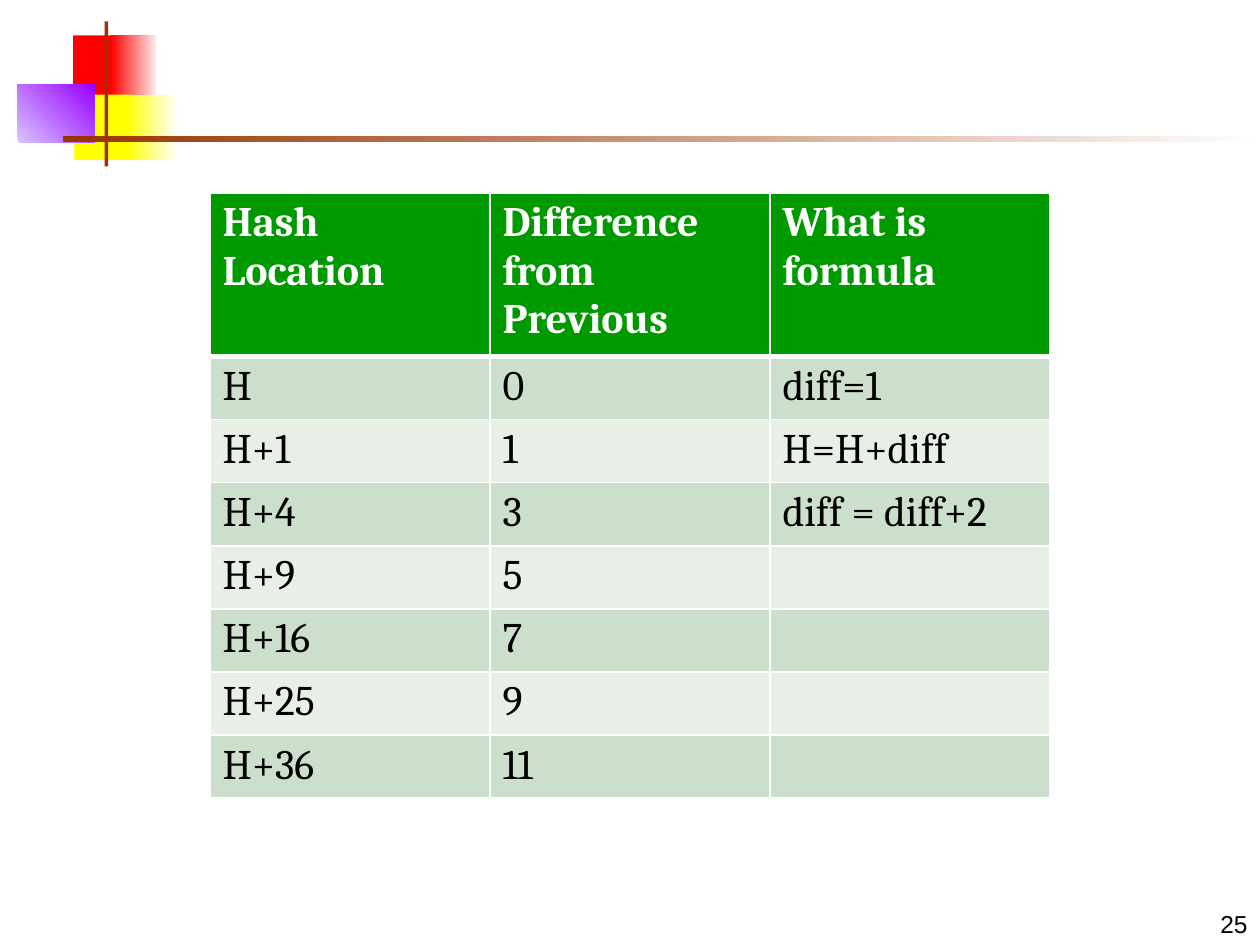
from dataclasses import dataclass

from lxml.etree import SubElement
from pptx import Presentation
from pptx.dml.color import RGBColor
from pptx.enum.shapes import MSO_SHAPE
from pptx.enum.text import MSO_ANCHOR, PP_ALIGN
from pptx.oxml.ns import qn
from pptx.util import Inches, Pt


@dataclass(frozen=True)
class Theme:
    """Hold the colours, fonts and sizes of the slide."""
    red: str = "FF0000"
    pink: str = "FFEAEA"
    yellow: str = "FFFF00"
    cream: str = "FFFFF8"
    lilac: str = "D8C4FF"
    purple: str = "9900FF"
    brown: str = "993300"
    white: str = "FFFFFF"
    black: str = "000000"
    head: str = "009900"
    bands: tuple = ("CCDECC", "E7EFE7")
    serif: str = "Cambria"
    sans: str = "Arial"
    body: int = 24
    small: int = 14
    thin: int = 1
    thick: int = 3


THEME = Theme()
COLS, ROWS = 100, 75
UNIT = Inches(0.1)

DECOR = (
    ((5.8, 2.8, 3.5, 5.2), (THEME.red,), 0),
    ((8.8, 2.8, 3.6, 5.2), (THEME.red, THEME.pink), 0),
    ((5.9, 7.5, 4.6, 5.2), (THEME.yellow,), 0),
    ((10, 7.5, 4, 5.2), (THEME.yellow, THEME.cream), 0),
    ((1.4, 6.7, 6.1, 4.6), (THEME.lilac, THEME.purple), 45),
    ((8.3, 1.7, 0.3, 11.5), (THEME.brown,), 0),
    ((5, 10.8, 95, 0.5), (THEME.brown, THEME.white), 0),
)

DATA = (
    ("Hash Location", "Difference from Previous", "What is formula"),
    ("H", "0", "diff=1"),
    ("H+1", "1", "H=H+diff"),
    ("H+4", "3", "diff = diff+2"),
    ("H+9", "5", ""),
    ("H+16", "7", ""),
    ("H+25", "9", ""),
    ("H+36", "11", ""),
)


def place(*cells):
    """Turn grid counts into lengths."""
    return [round(cell * UNIT) for cell in cells]


def style(para, face, size, tint, bold=False):
    """Format every run of a paragraph."""
    for run in para.runs:
        font = run.font
        font.name, font.size, font.bold = face, Pt(size), bold
        font.color.rgb = RGBColor.from_string(tint)


def add_block(slide, area, tints, angle):
    """Draw a plain or graded rectangle."""
    block = slide.shapes.add_shape(MSO_SHAPE.RECTANGLE, *place(*area))
    block.shadow.inherit = False
    block.line.fill.background()
    if len(tints) == 1:
        block.fill.solid()
        block.fill.fore_color.rgb = RGBColor.from_string(tints[0])
        return
    block.fill.gradient()
    block.fill.gradient_angle = angle
    for stop, tint in zip(block.fill.gradient_stops, tints):
        stop.color.rgb = RGBColor.from_string(tint)


def add_edges(cell, widths):
    """Draw the left, right, top and bottom borders of a cell."""
    props = cell._tc.get_or_add_tcPr()
    for side, width in zip("LRTB", widths):
        line = SubElement(props, qn(f"a:ln{side}"), w=str(Pt(width)))
        fill = SubElement(line, qn("a:solidFill"))
        SubElement(fill, qn("a:srgbClr"), val=THEME.white)


def fill_cell(cell, text, row):
    """Write and colour one table cell."""
    head = row == 0
    top = THEME.thick if row == 1 else THEME.thin
    base = THEME.thick if head else THEME.thin
    add_edges(cell, (THEME.thin, THEME.thin, top, base))
    cell.fill.solid()
    tint = THEME.head if head else THEME.bands[(row - 1) % 2]
    cell.fill.fore_color.rgb = RGBColor.from_string(tint)
    cell.text_frame.text = text
    ink = THEME.white if head else THEME.black
    style(cell.text_frame.paragraphs[0], THEME.serif, THEME.body, ink, head)


def add_grid(slide, data):
    """Add the table, centred across the slide."""
    wide, high = COLS * 2 / 3, 4.1 * len(data)
    area = place((COLS - wide) / 2, 15.3, wide, high)
    table = slide.shapes.add_table(len(data), len(data[0]), *area).table
    for row, texts in enumerate(data):
        for col, text in enumerate(texts):
            fill_cell(table.cell(row, col), text, row)


def add_number(slide, text):
    """Put the page number in the lower right corner."""
    wide, high = 20.8, 5
    area = place(COLS - wide, ROWS - high, wide, high)
    frame = slide.shapes.add_textbox(*area).text_frame
    frame.word_wrap = True
    frame.vertical_anchor = MSO_ANCHOR.BOTTOM
    frame.text = text
    para = frame.paragraphs[0]
    para.alignment = PP_ALIGN.RIGHT
    style(para, THEME.sans, THEME.small, THEME.black)


def main():
    """Build the slide and save it."""
    deck = Presentation()
    deck.slide_width, deck.slide_height = place(COLS, ROWS)
    slide = deck.slides.add_slide(deck.slide_layouts[6])
    for area, tints, angle in DECOR:
        add_block(slide, area, tints, angle)
    add_number(slide, "25")
    add_grid(slide, DATA)
    deck.save("out.pptx")


if __name__ == "__main__":
    main()
